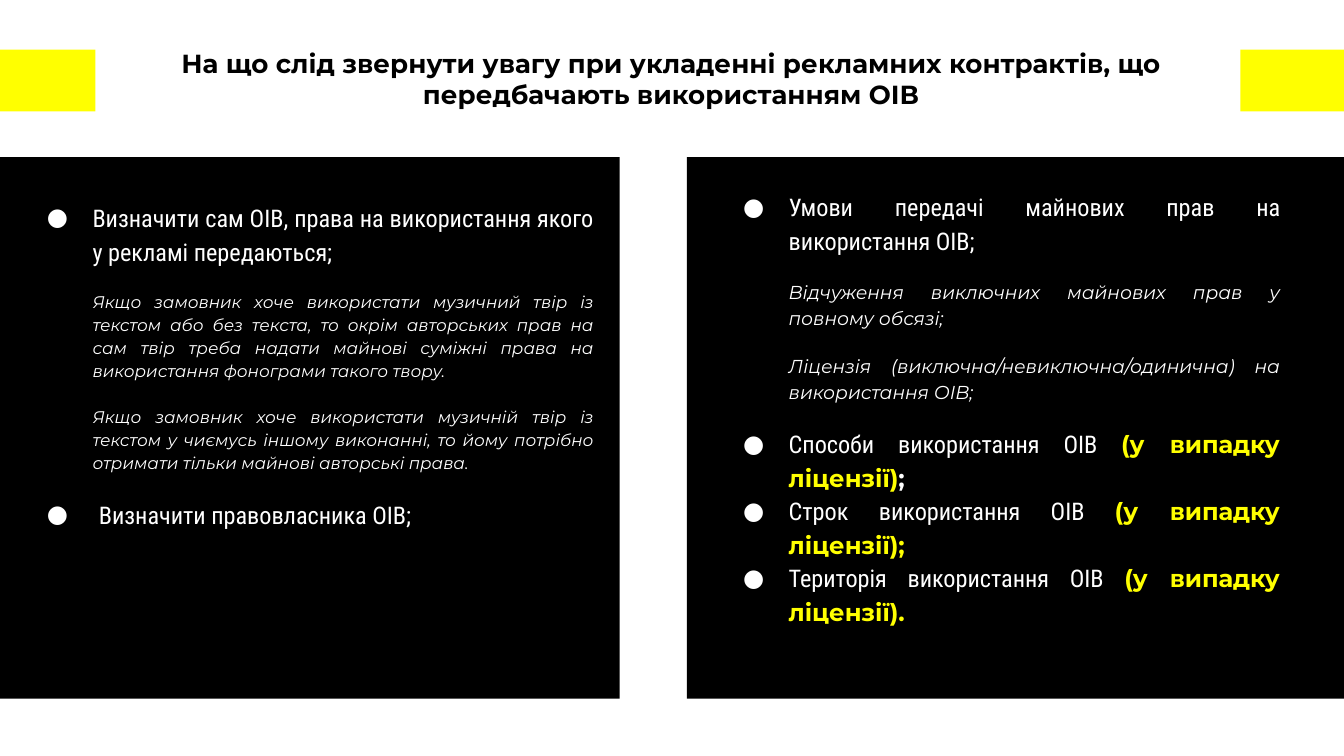
from lxml.etree import SubElement
from pptx import Presentation
from pptx.dml.color import RGBColor
from pptx.enum.shapes import MSO_SHAPE
from pptx.enum.text import MSO_ANCHOR, MSO_AUTO_SIZE, PP_ALIGN
from pptx.oxml.ns import qn
from pptx.util import Inches, Pt

BLACK, WHITE, YELLOW = "000000", "FFFFFF", "FFFF00"
HEADING_FONT, BODY_FONT = "Montserrat", "Roboto Condensed"
PANEL_TOP, PANEL_HEIGHT = 1.17, 4.03


def color(value):
    return RGBColor.from_string(value)


def add_run(paragraph, text, font, size, fill, bold=False, italic=False):
    run = paragraph.add_run()
    run.text = text
    run.font.name = font
    run.font.size = Pt(size)
    run.font.bold = bold
    run.font.italic = italic
    run.font.color.rgb = color(fill)


def prepare_frame(frame):
    frame.word_wrap = True
    frame.auto_size = MSO_AUTO_SIZE.NONE
    frame.vertical_anchor = MSO_ANCHOR.TOP
    frame.margin_left = frame.margin_right = Inches(0.1)
    frame.margin_top = frame.margin_bottom = Inches(0.1)


def add_block(slide, left, top, width, height, fill):
    block = slide.shapes.add_shape(
        MSO_SHAPE.RECTANGLE, Inches(left), Inches(top), Inches(width), Inches(height)
    )
    block.shadow.inherit = False
    block.fill.solid()
    block.fill.fore_color.rgb = color(fill)
    block.line.fill.background()


def add_bullet(properties):
    bullet_color = SubElement(properties, qn("a:buClr"))
    SubElement(bullet_color, qn("a:srgbClr"), val=WHITE)
    SubElement(properties, qn("a:buFont"), typeface=BODY_FONT)
    SubElement(properties, qn("a:buChar"), char="●")


def format_paragraph(paragraph, bulleted, space_before):
    paragraph.alignment = PP_ALIGN.JUSTIFY
    paragraph.line_spacing = 1.15
    paragraph.space_before = Pt(space_before)
    properties = paragraph._p.get_or_add_pPr()
    properties.set("marL", str(Inches(0.5)))
    properties.set("indent", str(Inches(-0.34) if bulleted else 0))
    if bulleted:
        add_bullet(properties)


def point(text):
    return text, BODY_FONT, 13, WHITE


def accent(text, fill=YELLOW):
    return text, HEADING_FONT, 13, fill, True


def item(*runs, space_before=12):
    return True, space_before, runs


def note(text, size):
    return False, 12, [(text, HEADING_FONT, size, WHITE, False, True)]


def add_title(slide, left, top, width, height, text):
    title = slide.shapes.title
    title.left, title.top = Inches(left), Inches(top)
    title.width, title.height = Inches(width), Inches(height)
    prepare_frame(title.text_frame)
    paragraph = title.text_frame.paragraphs[0]
    paragraph.alignment = PP_ALIGN.CENTER
    add_run(paragraph, text, HEADING_FONT, 14, BLACK, bold=True)


def add_panel(slide, left, width, text_offset, text_size, entries):
    add_block(slide, left, PANEL_TOP, width, PANEL_HEIGHT, BLACK)
    offset_x, offset_y = text_offset
    text_width, text_height = text_size
    text_box = slide.shapes.add_textbox(
        Inches(left + offset_x), Inches(PANEL_TOP + offset_y),
        Inches(text_width), Inches(text_height),
    )
    frame = text_box.text_frame
    prepare_frame(frame)
    for index, (bulleted, space_before, runs) in enumerate(entries):
        paragraph = frame.add_paragraph() if index else frame.paragraphs[0]
        format_paragraph(paragraph, bulleted, space_before)
        for run in runs:
            add_run(paragraph, *run)


OBJECT_ENTRIES = [
    item(point("Визначити сам ОІВ, права на використання якого у рекламі передаються;")),
    note("Якщо замовник хоче використати музичний твір із текстом або без текста, "
         "то окрім авторських прав на сам твір треба надати майнові суміжні права "
         "на використання фонограми такого твору.", 9),
    note("Якщо замовник хоче використати музичній твір із текстом у чиємусь іншому "
         "виконанні, то йому потрібно отримати тільки майнові авторські права.", 9),
    item((" ", HEADING_FONT, 13, WHITE), point("Визначити правовласника ОІВ;")),
]

TERMS_ENTRIES = [
    item(point("Умови передачі майнових прав на використання ОІВ;")),
    note("Відчуження виключних майнових прав у повному обсязі;", 10),
    note("Ліцензія (виключна/невиключна/одинична) на використання ОІВ;", 10),
    item(point("Способи використання ОІВ "), accent("(у випадку ліцензії)"),
         accent(";", WHITE)),
    item(point("Строк використання ОІВ "), accent("(у випадку ліцензії);"),
         space_before=0),
    item(point("Територія використання ОІВ "), accent("(у випадку ліцензії)."),
         space_before=0),
]


def main():
    presentation = Presentation()
    presentation.slide_width = Inches(10)
    presentation.slide_height = presentation.slide_width * 9 // 16
    slide = presentation.slides.add_slide(presentation.slide_layouts[5])
    add_title(slide, 0.59, 0.25, 8.81, 0.68,
              "На що слід звернути увагу при укладенні рекламних контрактів, "
              "що передбачають використанням ОІВ")
    for left, width in [(0, 0.71), (9.23, 0.77)]:
        add_block(slide, left, 0.37, width, 0.46, YELLOW)
    add_panel(slide, 0, 4.61, (0.09, 0.21), (4.42, 3.58), OBJECT_ENTRIES)
    add_panel(slide, 5.11, 4.89, (0.16, 0.13), (4.35, 3.63), TERMS_ENTRIES)
    presentation.save("out.pptx")


if __name__ == "__main__":
    main()
